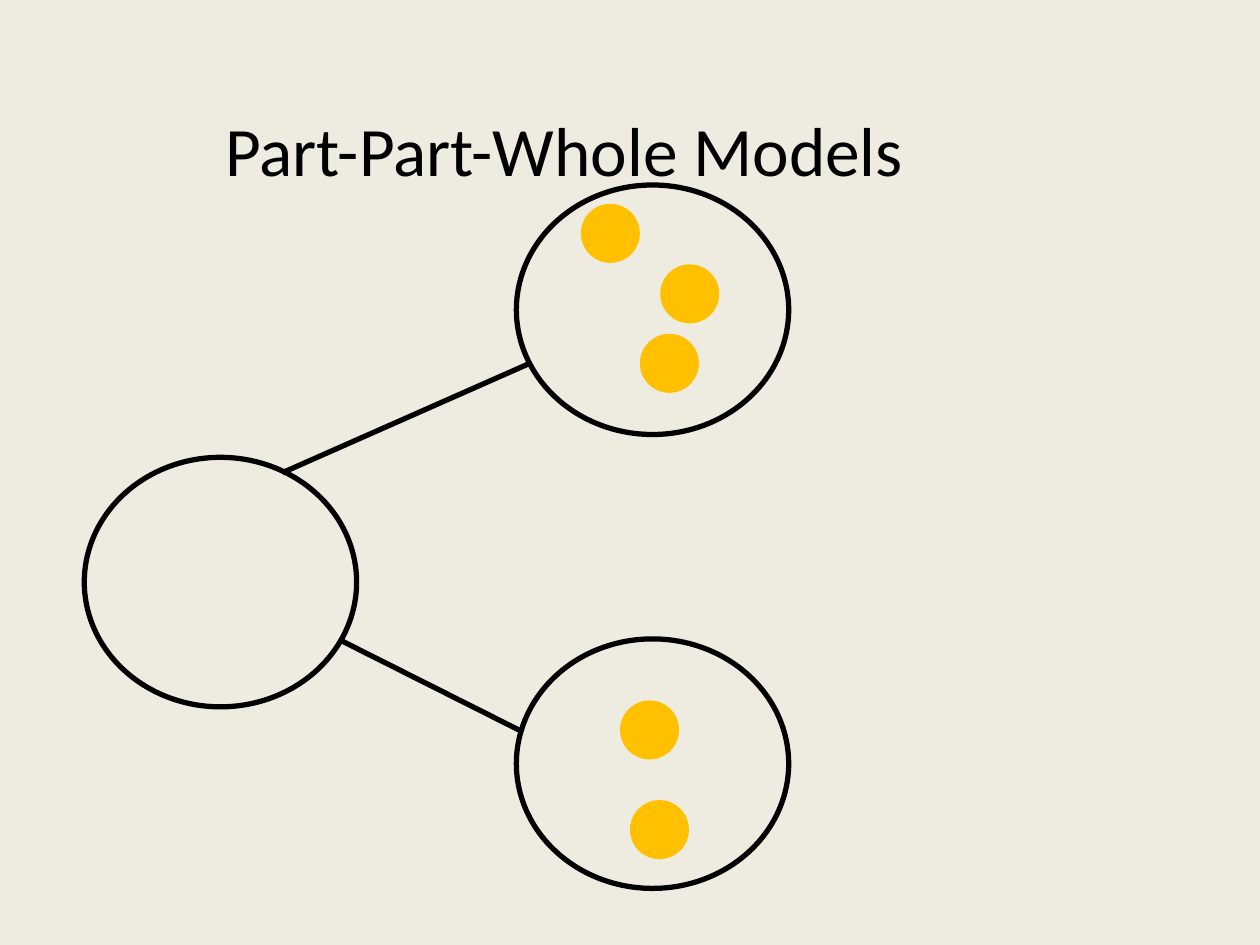
from lxml.etree import SubElement
from pptx import Presentation
from pptx.dml.color import RGBColor as RGB
from pptx.enum.shapes import MSO_CONNECTOR as Link, MSO_SHAPE as Kind
from pptx.enum.text import MSO_ANCHOR as Anchor, PP_ALIGN as Align
from pptx.oxml.ns import qn
from pptx.util import Cm, Pt

HUES = {"paper": "EEECE1", "ink": "000000", "dot": "FFC000"}
RING = (5.49, 5.03)
DOT = (1.19, 1.19)

# Left and top of each ring and counter, in cm
WHOLE = (1.7, 9.22)
PARTS = [(10.41, 3.73), (10.41, 12.88)]
DOTS = [(11.71, 4.11), (13.31, 5.33), (12.9, 6.73), (12.5, 14.12), (12.7, 16.13)]
# Both ends of each link
LINKS = [(10.49, 14.73, 6.91, 12.93), (10.69, 7.32, 5.69, 9.53)]


def hue(name):
    return RGB.from_string(HUES[name])


def style(item, values):
    for name, value in values.items():
        setattr(item, name, value)


def draw_line(line):
    line.color.rgb = hue("ink")
    line.width = Pt(3)


def add_title(slide, text):
    box = slide.shapes.add_textbox(Cm(0.71), Cm(0.91), Cm(22.02), Cm(2.49))
    frame = box.text_frame
    style(frame, {"word_wrap": True, "vertical_anchor": Anchor.TOP,
                  "margin_top": Cm(1.25), "margin_bottom": 0,
                  "margin_right": Cm(0.94)})
    para = frame.paragraphs[0]
    para.alignment = Align.CENTER
    run = para.add_run()
    run.text = text
    style(run.font, {"name": "Calibri", "size": Pt(39.6)})
    run.font.color.rgb = hue("ink")


def add_oval(slide, spot, size):
    oval = slide.shapes.add_shape(Kind.OVAL, *map(Cm, spot + size))
    oval.shadow.inherit = False
    return oval


def add_ring(slide, spot):
    ring = add_oval(slide, spot, RING)
    ring.fill.background()
    draw_line(ring.line)


def add_dot(slide, spot):
    dot = add_oval(slide, spot, DOT)
    dot.fill.solid()
    dot.fill.fore_color.rgb = hue("dot")
    dot.line.fill.background()


def add_link(slide, ends):
    link = slide.shapes.add_connector(Link.STRAIGHT, *map(Cm, ends))
    draw_line(link.line)
    SubElement(link._element.spPr, qn("a:effectLst"))


def main():
    deck = Presentation()
    style(deck, {"slide_width": Cm(25.4), "slide_height": Cm(19.05)})
    slide = deck.slides.add_slide(deck.slide_layouts[6])
    slide.background.fill.solid()
    slide.background.fill.fore_color.rgb = hue("paper")

    add_title(slide, "Part-Part-Whole Models")

    # Whole and parts, joined by links
    for spot in PARTS + [WHOLE]:
        add_ring(slide, spot)
    for ends in LINKS:
        add_link(slide, ends)

    # Counters in the parts
    for spot in DOTS:
        add_dot(slide, spot)

    deck.save("out.pptx")


if __name__ == "__main__":
    main()
